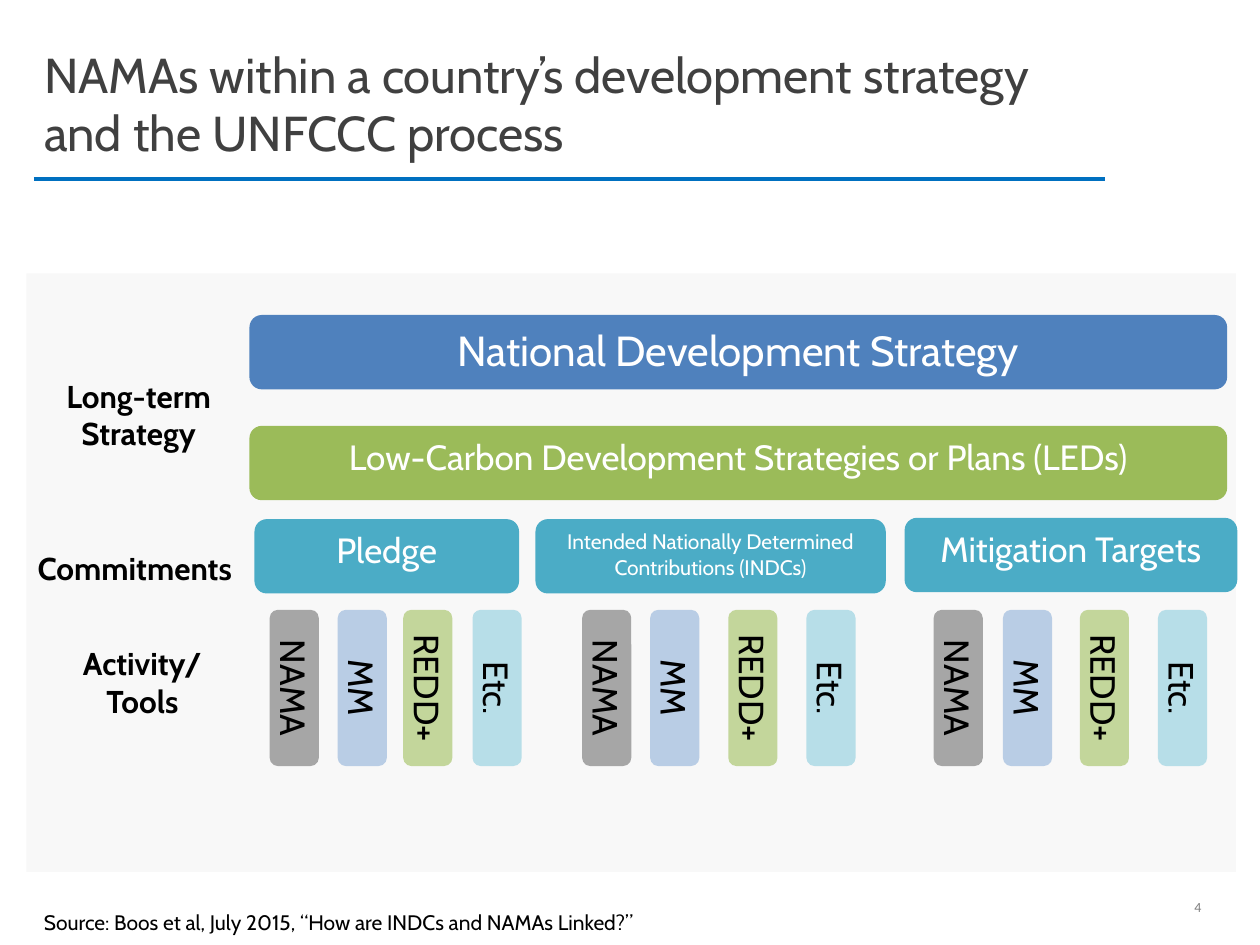
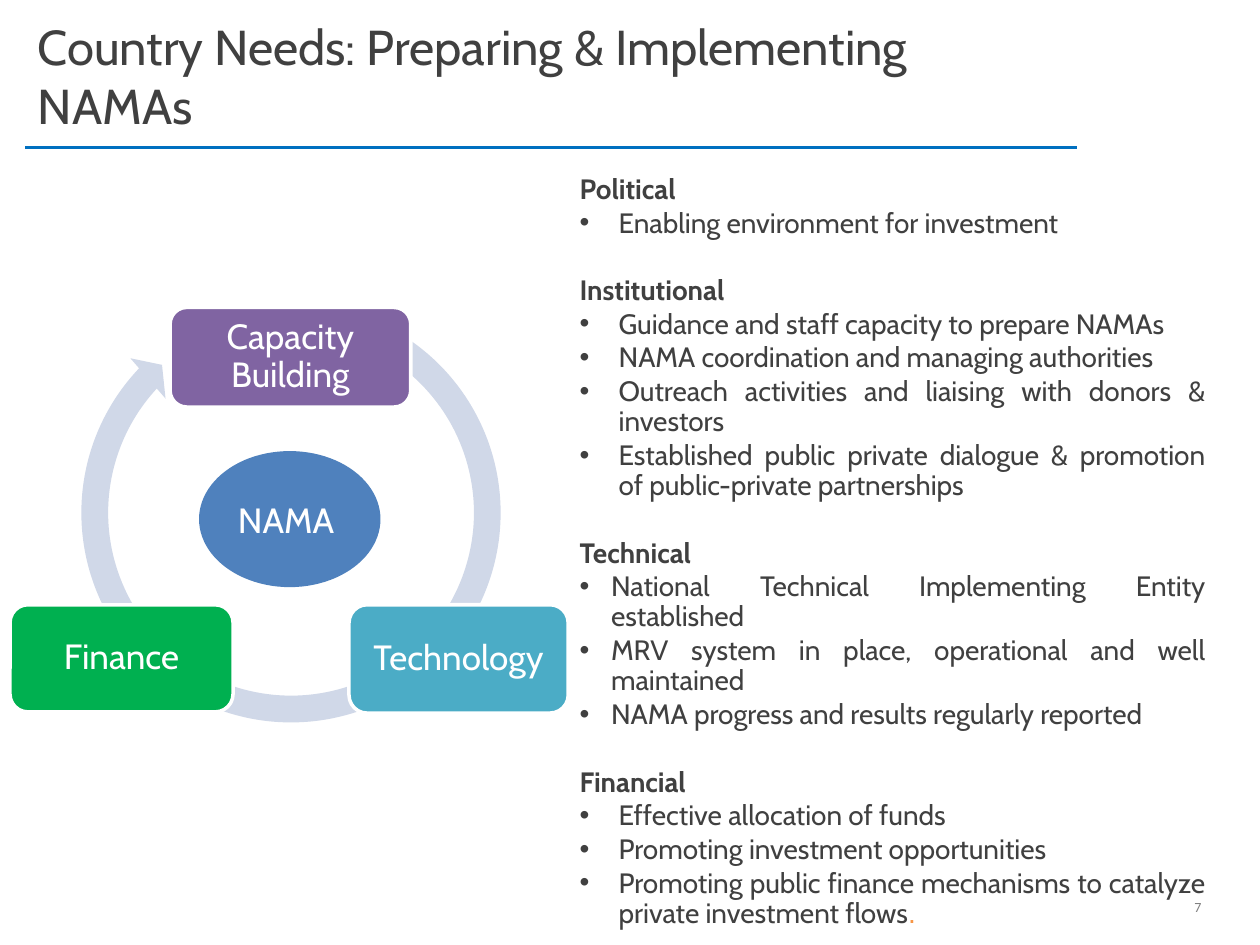
from lxml import etree
from pptx import Presentation
from pptx import util as u
from pptx.dml.color import RGBColor
from pptx.enum import shapes, text
from pptx.oxml.ns import qn

INK = RGBColor(0x40, 0x40, 0x40)
BLACK = RGBColor(0, 0, 0)
WHITE = RGBColor(0xFF, 0xFF, 0xFF)
GREY = RGBColor(0x7F, 0x7F, 0x7F)
PANEL = RGBColor(0xF8, 0xF8, 0xF8)
RULE = RGBColor(0x00, 0x70, 0xC0)
BLUE = RGBColor(0x4F, 0x81, 0xBD)
GREEN = RGBColor(0x9B, 0xBB, 0x59)
TEAL = RGBColor(0x4B, 0xAC, 0xC6)
PURPLE = RGBColor(0x80, 0x64, 0xA2)
EMERALD = RGBColor(0x00, 0xB0, 0x50)
ORANGE = RGBColor(0xF7, 0x96, 0x46)
PALE_GREY = RGBColor(0xA6, 0xA6, 0xA6)
PALE_BLUE = RGBColor(0xB9, 0xCD, 0xE5)
PALE_GREEN = RGBColor(0xC3, 0xD6, 0x9B)
PALE_TEAL = RGBColor(0xB7, 0xDE, 0xE8)
RING = RGBColor(0xD0, 0xD8, 0xE8)

FONT = "Cabin"
LEFT, CENTER, JUSTIFY = (text.PP_ALIGN.LEFT, text.PP_ALIGN.CENTER,
                         text.PP_ALIGN.JUSTIFY)
TOP, MIDDLE = text.MSO_ANCHOR.TOP, text.MSO_ANCHOR.MIDDLE
ROUNDED = shapes.MSO_SHAPE.ROUNDED_RECTANGLE

deck = Presentation()
deck.slide_width, deck.slide_height = u.Inches(10), u.Inches(7.5)
# Grid of 10 columns by 7.5 rows
COL, ROW = deck.slide_width / 10, deck.slide_height / 7.5


def add_block(page, kind, cell, fill=None, anchor=TOP):
    """Add a filled preset shape, or a text box when kind is None."""
    place = [int(n * step) for n, step in zip(cell, (COL, ROW, COL, ROW))]
    if kind is None:
        block = page.shapes.add_textbox(*place)
    else:
        block = page.shapes.add_shape(kind, *place)
        block.shadow.inherit = False
        block.fill.solid()
        block.fill.fore_color.rgb = fill
        block.line.fill.background()
    block.text_frame.word_wrap = True
    block.text_frame.vertical_anchor = anchor
    return block


def write(para, words, size, colour, bold=False, align=LEFT, font=FONT):
    para.alignment = align
    span = para.add_run()
    span.text = words
    span.font.name = font
    span.font.size = u.Pt(size)
    span.font.bold = bold
    span.font.color.rgb = colour


# Shared parts: title, rule under it, page number
headings = [
    (5, "NAMAs within a country’s development strategy and the UNFCCC process",
     (0.25, 0.3, 8.61, 1.25), (0.27, 8.77, 1.42), "4"),
    (1, "Country Needs: Preparing & Implementing NAMAs",
     (0.2, 0.08, 8.36, 1.25), (0.2, 8.55, 1.17), "7"),
]
for layout, words, cell, (start, end, level), number in headings:
    page = deck.slides.add_slide(deck.slide_layouts[layout])
    title = page.shapes.title
    title.left, title.top, title.width, title.height = [
        int(n * step) for n, step in zip(cell, (COL, ROW, COL, ROW))]
    title.text_frame.auto_size = text.MSO_AUTO_SIZE.NONE
    title.text_frame.vertical_anchor = TOP
    write(title.text_frame.paragraphs[0], words, 28, INK)

    rule = page.shapes.add_connector(
        shapes.MSO_CONNECTOR.STRAIGHT, int(start * COL), int(level * ROW),
        int(end * COL), int(level * ROW))
    rule.line.color.rgb = RULE
    rule.line.width = u.Pt(2)
    etree.SubElement(rule._element.spPr, qn("a:effectLst"))

    box = add_block(page, None, (9.38, 7.08, 0.42, 0.24))
    write(box.text_frame.paragraphs[0], number, 8, GREY, font="Calibri")

strategy_page, needs_page = deck.slides

# Strategy page: panel, strategy bars and commitments
add_block(strategy_page, shapes.MSO_SHAPE.RECTANGLE, (0.21, 2.17, 9.6, 4.75), PANEL)
bars = [
    ("National Development Strategy", (1.98, 2.5, 7.76), BLUE, 24),
    ("Low-Carbon Development Strategies or Plans (LEDs)",
     (1.98, 3.38, 7.76), GREEN, 20),
    ("Pledge", (2.02, 4.12, 2.1), TEAL, 20),
    ("Intended Nationally Determined Contributions (INDCs)",
     (4.25, 4.12, 2.78), TEAL, 12),
    ("Mitigation Targets", (7.18, 4.11, 2.64), TEAL, 20),
]
for words, cell, fill, size in bars:
    bar = add_block(strategy_page, ROUNDED, (*cell, 0.59), fill)
    write(bar.text_frame.paragraphs[0], words, size, WHITE, align=CENTER)

# Upright tools below each commitment
tools = [("NAMA", PALE_GREY), ("MM", PALE_BLUE),
         ("REDD+", PALE_GREEN), ("Etc.", PALE_TEAL)]
tool_groups = [(2.14, (0, 0.54, 1.06, 1.61)),
               (4.62, (0, 0.54, 1.16, 1.78)),
               (7.41, (0, 0.55, 1.16, 1.78))]
for group_left, offsets in tool_groups:
    for (words, fill), offset in zip(tools, offsets):
        tool = add_block(strategy_page, ROUNDED,
                         (group_left + offset, 4.84, 0.39, 1.24), fill, MIDDLE)
        tool.text_frame._txBody.bodyPr.set("vert", "vert")
        write(tool.text_frame.paragraphs[0], words, 20, BLACK, align=CENTER)

# Row labels and source
labels = [
    (["Long-term Strategy"], (0.09, 2.94, 2.02, 1.01), TOP),
    (["Commitments"], (0.06, 4, 2.02, 1.01), MIDDLE),
    (["Activity/", "Tools"], (0.12, 4.76, 2.02, 1.31), MIDDLE),
]
for lines, cell, anchor in labels:
    frame = add_block(strategy_page, None, cell, anchor=anchor).text_frame
    for index, words in enumerate(lines):
        para = frame.add_paragraph() if index else frame.paragraphs[0]
        write(para, words, 18, BLACK, bold=True, align=CENTER)
source = add_block(strategy_page, None, (0.25, 7.17, 8.27, 0.3))
write(source.text_frame.paragraphs[0],
      "Source: Boos et al, July 2015, “How are INDCs and NAMAs Linked?”", 12, BLACK)

# Needs page: list of needs, with the indent of each section's bullets
needs = [
    ("Political", 0.31, ["Enabling environment for investment"]),
    ("Institutional", 0.31, [
        "Guidance and staff capacity to prepare NAMAs",
        "NAMA coordination and managing authorities",
        "Outreach activities and liaising with donors & investors",
        "Established public private dialogue & promotion of "
        "public-private partnerships"]),
    ("Technical", 0.25, [
        "National Technical Implementing Entity established",
        "MRV system in place, operational and well maintained",
        "NAMA progress and results regularly reported"]),
    ("Financial", 0.31, [
        "Effective allocation of funds",
        "Promoting investment opportunities",
        "Promoting public finance mechanisms to catalyze private "
        "investment flows"]),
]
body = needs_page.placeholders[1]
body.left, body.top = int(4.5 * COL), int(1.34 * ROW)
body.width, body.height = int(5.17 * COL), int(6.14 * ROW)
frame = body.text_frame
frame.auto_size = text.MSO_AUTO_SIZE.NONE
for section, (heading, indent, items) in enumerate(needs):
    for index, words in enumerate([heading, *items]):
        is_heading = index == 0
        is_first = is_heading and section == 0
        para = frame.paragraphs[0] if is_first else frame.add_paragraph()
        para.level = 0 if is_heading else 1
        para.line_spacing = 0.9
        para.space_before = u.Pt(0 if is_first else 20.3 if is_heading else 1)
        para.space_after = u.Pt(1)
        hang = 0 if is_heading else int(indent * COL)
        props = para._p.get_or_add_pPr()
        props.set("marL", str(hang))
        props.set("indent", str(-hang))
        if is_heading:
            etree.SubElement(props, qn("a:buNone"))
        else:
            etree.SubElement(props, qn("a:buFont"), typeface="Arial")
            etree.SubElement(props, qn("a:buChar"), char="•")
        write(para, words, 16, INK, bold=is_heading, align=JUSTIFY)
write(para, ".", 16, ORANGE, align=JUSTIFY, font="Arial")

# Cycle: hub, ring arrow and three cards
hub = add_block(needs_page, shapes.MSO_SHAPE.OVAL, (1.58, 3.58, 1.44, 1.08),
                BLUE, MIDDLE)
write(hub.text_frame.paragraphs[0], "NAMA", 20, WHITE)

ring = add_block(needs_page, shapes.MSO_SHAPE.CIRCULAR_ARROW,
                 (0.54, 2.3, 3.54, 3.54), RING)
DEGREE = 0.6
ring_shape = (0.06, 5.7 * DEGREE, 223.2 * DEGREE, 293.6 * DEGREE, 0.06)
for index, value in enumerate(ring_shape):
    ring.adjustments[index] = value

cards = [("Capacity Building", (1.35, 2.44, 1.91, 0.79), PURPLE),
         ("Technology", (2.77, 4.8, 1.74, 0.86), TEAL),
         ("Finance", (0.08, 4.8, 1.77, 0.85), EMERALD)]
for words, cell, fill in cards:
    card = add_block(needs_page, ROUNDED, cell, fill, MIDDLE)
    card.line.color.rgb = WHITE
    card.line.width = u.Pt(2)
    para = card.text_frame.paragraphs[0]
    para.line_spacing = 0.9
    write(para, words, 20, WHITE, align=CENTER)

deck.save("out.pptx")
